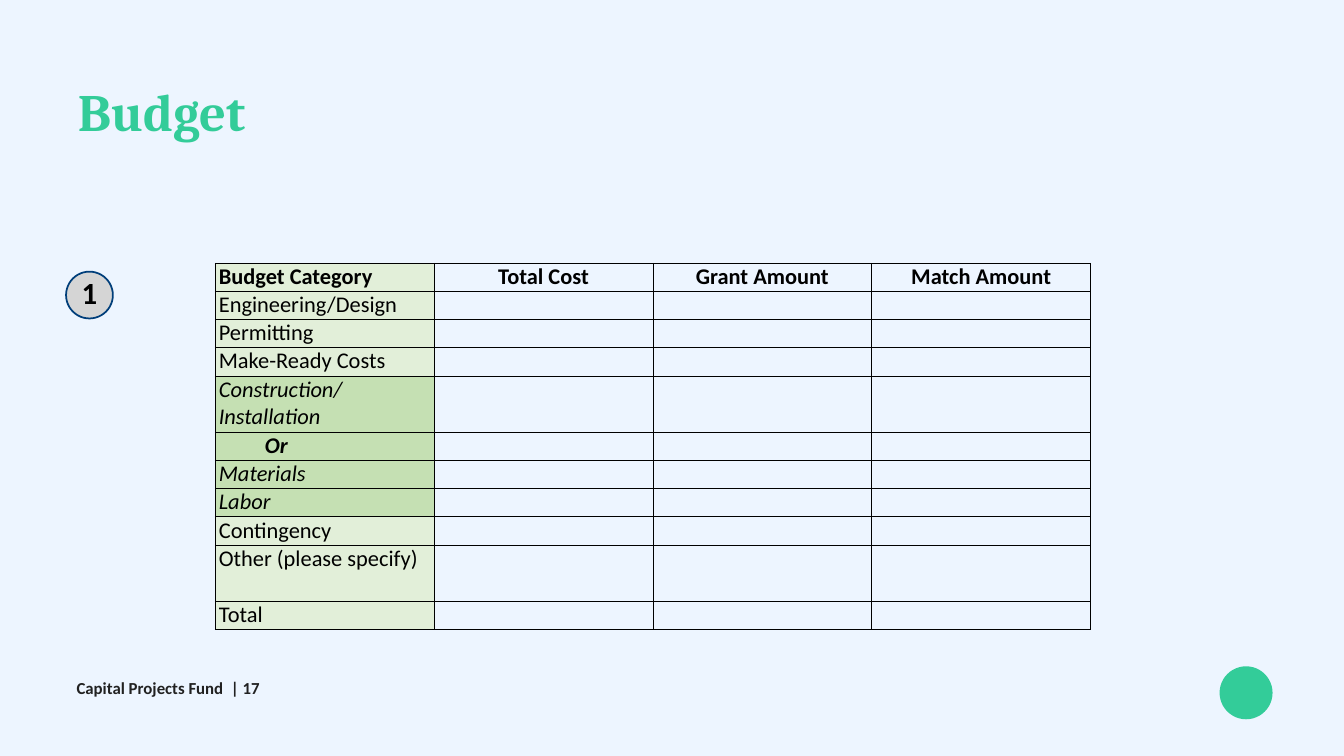
import pptx
import pptx.util
import pptx.dml.color
import pptx.enum.shapes
import pptx.enum.text
import pptx.oxml.ns
from lxml import etree

Cm, Pt = pptx.util.Cm, pptx.util.Pt
RGBColor = pptx.dml.color.RGBColor
PP_ALIGN = pptx.enum.text.PP_ALIGN
MSO_ANCHOR = pptx.enum.text.MSO_ANCHOR
OVAL = pptx.enum.shapes.MSO_SHAPE.OVAL
qn = pptx.oxml.ns.qn

PALE_BLUE = RGBColor(0xED, 0xF5, 0xFF)
GREEN = RGBColor(0x33, 0xCC, 0x99)
GREY = RGBColor(0xD5, 0xD5, 0xD5)
NAVY = RGBColor(0x00, 0x3E, 0x7A)
BLACK = RGBColor(0, 0, 0)
CHARCOAL = RGBColor(0x21, 0x21, 0x21)
LIGHT_GREEN = RGBColor(0xE2, 0xEF, 0xD9)
MID_GREEN = RGBColor(0xC5, 0xE0, 0xB3)

# Content
TITLE = "Budget"
FOOTER = "Capital Projects Fund  | 17"
STEP = "1"
HEADER = ["Budget Category", "Total Cost", "Grant Amount", "Match Amount"]
# category, height in lines, fill, bold, italic, indent in cm
CATEGORIES = [
    ("Engineering/Design", 1, LIGHT_GREEN, False, False, 0),
    ("Permitting", 1, LIGHT_GREEN, False, False, 0),
    ("Make-Ready Costs", 1, LIGHT_GREEN, False, False, 0),
    ("Construction/Installation", 2, MID_GREEN, False, True, 0),
    ("Or", 1, MID_GREEN, True, True, 2.32),
    ("Materials", 1, MID_GREEN, False, True, 0),
    ("Labor", 1, MID_GREEN, False, True, 0),
    ("Contingency", 1, LIGHT_GREEN, False, False, 0),
    ("Other (please specify)", 2, LIGHT_GREEN, False, False, 0),
    ("Total", 1, LIGHT_GREEN, False, False, 0),
]
LINE_HEIGHT = Cm(1.42)
COLUMN_WIDTH = Cm(11.03)
THIN, THICK = 1, 2.25


def add_run(p, text, size, color, font="Calibri", bold=True, italic=False):
    r = p.add_run()
    r.text = text
    r.font.name, r.font.size = font, Pt(size)
    r.font.bold, r.font.italic = bold, italic
    r.font.color.rgb = color


def add_text(s, x, y, w, h, text, size, color, font="Calibri"):
    tf = s.shapes.add_textbox(Cm(x), Cm(y), Cm(w), Cm(h)).text_frame
    tf.word_wrap = True
    p = tf.paragraphs[0]
    p.line_spacing = 0.9
    add_run(p, text, size, color, font)


def add_circle(s, x, y, diameter, fill):
    sp = s.shapes.add_shape(OVAL, Cm(x), Cm(y), Cm(diameter), Cm(diameter))
    sp.shadow.inherit = False
    sp.fill.solid()
    sp.fill.fore_color.rgb = fill
    sp.line.fill.background()
    return sp


def set_borders(cell, top, bottom):
    tcPr = cell._tc.get_or_add_tcPr()
    widths = [("lnL", THIN), ("lnR", THIN), ("lnT", top), ("lnB", bottom)]
    for i, (tag, width) in enumerate(widths):
        ln = etree.Element(qn(f"a:{tag}"), w=str(Pt(width)))
        fill = etree.SubElement(ln, qn("a:solidFill"))
        etree.SubElement(fill, qn("a:srgbClr"), val=str(BLACK))
        tcPr.insert(i, ln)


def format_cell(cell, fill=None, top=THIN, bottom=THIN):
    cell.margin_left = cell.margin_right = Cm(0.18)
    cell.margin_top = cell.margin_bottom = 0
    if fill is None:
        cell.fill.background()
    else:
        cell.fill.solid()
        cell.fill.fore_color.rgb = fill
    set_borders(cell, top, bottom)


def add_budget_table(s, x, y):
    rows = [(HEADER[0], 1, LIGHT_GREEN, True, False, 0)] + CATEGORIES
    height = LINE_HEIGHT * sum(row[1] for row in rows)
    table = s.shapes.add_table(len(rows), len(HEADER), Cm(x), Cm(y),
                               COLUMN_WIDTH * len(HEADER), height).table
    table.first_row = table.horz_banding = False
    for column in table.columns:
        column.width = COLUMN_WIDTH

    last = len(rows) - 1
    for i, (text, lines, fill, bold, italic, indent) in enumerate(rows):
        table.rows[i].height = LINE_HEIGHT * lines
        # A thick rule separates the total
        top = THICK if i == last else THIN
        bottom = THICK if i == last - 1 else THIN
        for j in range(len(HEADER)):
            format_cell(table.cell(i, j), fill if j == 0 else None, top, bottom)
        p = table.cell(i, 0).text_frame.paragraphs[0]
        if indent:
            p._p.get_or_add_pPr().set("marL", str(Cm(indent)))
        add_run(p, text, 32, BLACK, bold=bold, italic=italic)

    for j, text in enumerate(HEADER[1:], 1):
        p = table.cell(0, j).text_frame.paragraphs[0]
        p.alignment = PP_ALIGN.CENTER
        add_run(p, text, 32, BLACK)


def main():
    prs = pptx.Presentation()
    prs.slide_width, prs.slide_height = Cm(67.74), Cm(38.1)
    s = prs.slides.add_slide(prs.slide_layouts[6])
    s.background.fill.solid()
    s.background.fill.fore_color.rgb = PALE_BLUE

    # Corner dot and title
    add_circle(s, 61.47, 33.58, 2.67, GREEN)
    add_text(s, 3.68, 4.24, 60.35, 3.15, TITLE, 75, GREEN, "Cambria")

    # Step marker
    sp = add_circle(s, 3.33, 13.69, 2.36, GREY)
    sp.line.color.rgb, sp.line.width = NAVY, Pt(2.5)
    tf = sp.text_frame
    tf.margin_left = tf.margin_right = tf.margin_top = tf.margin_bottom = Cm(0.13)
    tf.vertical_anchor = MSO_ANCHOR.MIDDLE
    p = tf.paragraphs[0]
    p.alignment, p.line_spacing = PP_ALIGN.CENTER, 0.85
    add_run(p, STEP, 44, BLACK)

    # Footer and table
    add_text(s, 3.61, 34.16, 48.72, 1.19, FOOTER, 24, CHARCOAL)
    add_budget_table(s, 10.85, 13.26)
    prs.save("out.pptx")


if __name__ == "__main__":
    main()
